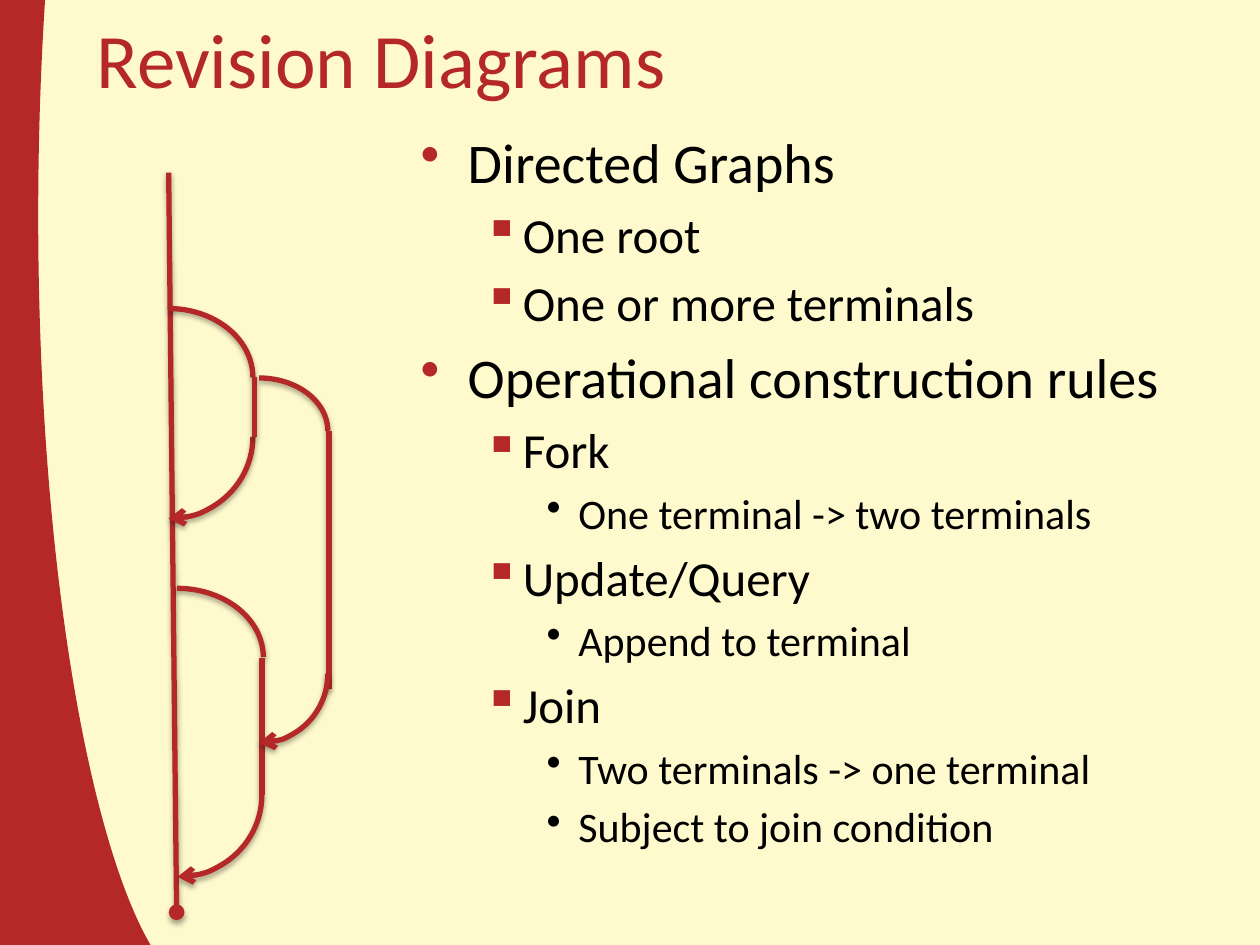
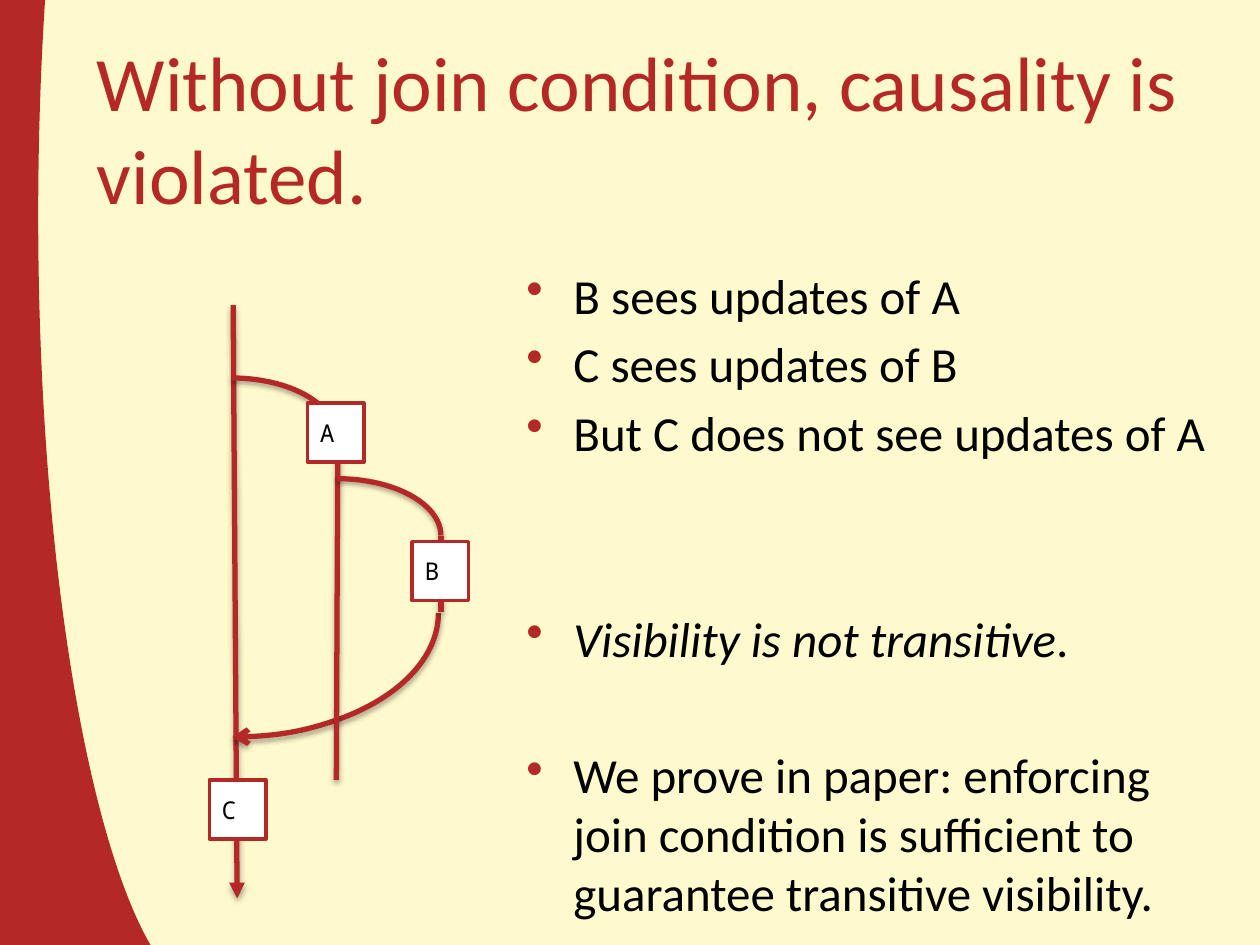
"""Builds two slides that explain revision diagrams and their join condition."""
from lxml import etree
from pptx import Presentation
from pptx.dml.color import RGBColor
from pptx.enum.shapes import MSO_CONNECTOR, MSO_SHAPE
from pptx.enum.text import MSO_ANCHOR, PP_ALIGN
from pptx.oxml.ns import qn
from pptx.util import Cm, Pt

ARC, RECTANGLE = MSO_SHAPE.ARC, MSO_SHAPE.RECTANGLE
STRAIGHT = MSO_CONNECTOR.STRAIGHT
MIDDLE, TOP = MSO_ANCHOR.MIDDLE, MSO_ANCHOR.TOP
LEFT = PP_ALIGN.LEFT

COLORS = {"background": "FFFACD", "accent": "B42828", "text": "000000", "label": "FFFFFF"}
BODY_FONT, LABEL_FONT = "Calibri", "Noto Sans Mono"
BRANCH_WIDTH = 3
LABEL_SIZE = (1.14, 1.19)
BULLETS = [
    {"char": "•", "color": "accent", "indent": 0.95, "hang": 0.95},
    {"char": "▪", "color": "accent", "indent": 2.06, "hang": 0.79},
    {"char": "•", "color": "text", "indent": 3.18, "hang": 0.64},
]
LEVEL_SIZES = [32, 28, 24]

GRAPH_RULES = [
    (0, "Directed Graphs"),
    (1, "One root"),
    (1, "One or more terminals"),
    (0, "Operational construction rules"),
    (1, "Fork"),
    (2, "One terminal -> two terminals"),
    (1, "Update/Query"),
    (2, "Append to terminal"),
    (1, "Join"),
    (2, "Two terminals -> one terminal"),
    (2, "Subject to join condition"),
]
VISIBILITY_POINTS = [
    (5.6, [("B sees updates of A", False)]),
    (5.6, [("C sees updates of B", False)]),
    (5.6, [("But C does not see updates of A", False)]),
    (84, [("Visibility is not transitive", True), (".", False)]),
    (44.5, [("We prove in paper: enforcing join condition is sufficient "
             "to guarantee transitive visibility.", False)]),
]


def rgb(name):
    """Return the named colour."""
    return RGBColor.from_string(COLORS[name])


def add_child(parent, tag, **attributes):
    """Append a drawing element with its attributes."""
    child = etree.SubElement(parent, qn(tag))
    for key, value in attributes.items():
        child.set(key, str(value))
    return child


def write(paragraph, text, *, size, color="text", font=BODY_FONT, italic=False):
    """Add a formatted run of text to a paragraph."""
    run = paragraph.add_run()
    run.text = text
    run.font.size = Pt(size)
    run.font.name = font
    run.font.italic = italic
    run.font.color.rgb = rgb(color)


def add_text_frame(slide, box, anchor=TOP):
    """Add a wrapping text box and return its frame."""
    frame = slide.shapes.add_textbox(*map(Cm, box)).text_frame
    frame.word_wrap = True
    frame.vertical_anchor = anchor
    return frame


def add_bullet(frame, index, level, space_before):
    """Return a bulleted paragraph of the given level."""
    paragraph = frame.add_paragraph() if index else frame.paragraphs[0]
    paragraph.level = level
    paragraph.space_before = Pt(space_before if index else 0)
    style = BULLETS[level]
    properties = paragraph._p.get_or_add_pPr()
    properties.set("marL", str(Cm(style["indent"])))
    properties.set("indent", str(-Cm(style["hang"])))
    add_child(add_child(properties, "a:buClr"), "a:srgbClr", val=COLORS[style["color"]])
    add_child(properties, "a:buChar", char=style["char"])
    return paragraph


def style_branch(branch, head=None, tail=None):
    """Give a branch its stroke, line ends and soft shadow."""
    branch.line.color.rgb = rgb("accent")
    branch.line.width = Pt(BRANCH_WIDTH)
    stroke = branch.line._get_or_add_ln()
    if head:
        add_child(stroke, "a:headEnd", type=head)
    if tail:
        add_child(stroke, "a:tailEnd", type=tail)
    effects = add_child(branch._element.spPr, "a:effectLst")
    shadow = add_child(effects, "a:outerShdw", blurRad=Pt(3.1), dist=Pt(1.8),
                       dir=90 * 60000, rotWithShape=0)
    add_child(add_child(shadow, "a:srgbClr", val=COLORS["text"]), "a:alpha", val=35000)


def add_revision(slide, start, end, tail=None):
    """Draw a straight revision line."""
    ends = map(Cm, (*start, *end))
    style_branch(slide.shapes.add_connector(STRAIGHT, *ends), tail=tail)


def add_arc(slide, box, flip=None):
    """Add an unfilled arc, mirrored along the given axis."""
    arc = slide.shapes.add_shape(ARC, *map(Cm, box))
    arc.fill.background()
    if flip:
        arc._element.spPr.xfrm.set(flip, "1")
    return arc


def add_fork(slide, *box):
    """Draw the curve that leaves a revision."""
    style_branch(add_arc(slide, box))


def add_join(slide, *box):
    """Draw the curve that returns to a revision with an arrow."""
    style_branch(add_arc(slide, box, "flipV"), head="arrow")


def add_label(slide, name, left, top):
    """Draw a boxed revision name."""
    label = slide.shapes.add_shape(RECTANGLE, *map(Cm, (left, top, *LABEL_SIZE)))
    label.shadow.inherit = False
    label.fill.solid()
    label.fill.fore_color.rgb = rgb("label")
    label.line.color.rgb = rgb("accent")
    label.line.width = Pt(2)
    label.text_frame.vertical_anchor = MIDDLE
    paragraph = label.text_frame.paragraphs[0]
    paragraph.alignment = LEFT
    write(paragraph, name, size=14, font=LABEL_FONT)


def add_slide(deck, title, title_height):
    """Add a slide with the shared background, side band and title."""
    slide = deck.slides.add_slide(deck.slide_layouts[6])
    slide.background.fill.solid()
    slide.background.fill.fore_color.rgb = rgb("background")
    band = add_arc(slide, (-0.64, -12.27, 7.82, 33.22), "flipH")
    band.adjustments[0] = 177.67
    band.adjustments[1] = 55.34
    band.shadow.inherit = False
    band.line.color.rgb = rgb("accent")
    band.line.width = Pt(80)
    frame = add_text_frame(slide, (1.7, -0.43, 22.86, title_height), MIDDLE)
    write(frame.paragraphs[0], title, size=44, color="accent")
    return slide


def build_diagram_slide(deck):
    """Build the slide on the rules of revision diagrams."""
    slide = add_slide(deck, "Revision Diagrams", 3.18)
    frame = add_text_frame(slide, (8.23, 2.44, 16.43, 16.03))
    for index, (level, rule) in enumerate(GRAPH_RULES):
        size = LEVEL_SIZES[level]
        write(add_bullet(frame, index, level, size * 0.2), rule, size=size)

    add_revision(slide, (3.4, 3.48), (3.56, 18.39), tail="oval")
    add_fork(slide, 1.7, 6.22, 3.4, 2.77)
    add_join(slide, 1.7, 7.16, 3.4, 3.3)
    add_revision(slide, (5.13, 7.59), (5.13, 8.81))
    add_fork(slide, 3.84, 7.62, 2.77, 2.13)
    add_revision(slide, (6.63, 8.69), (6.63, 13.89))
    add_fork(slide, 1.83, 11.86, 3.48, 2.77)
    add_revision(slide, (5.28, 13.26), (5.28, 16.03))
    add_join(slide, 3.84, 12.19, 2.77, 2.79)
    add_join(slide, 1.88, 14.38, 3.4, 3.3)


def build_causality_slide(deck):
    """Build the slide on causality without the join condition."""
    slide = add_slide(deck, "Without join condition, causality is violated.", 5.99)
    add_revision(slide, (4.7, 6.15), (4.78, 18.11), tail="triangle")
    add_fork(slide, 2.57, 7.62, 4.19, 2.29)
    add_join(slide, 0.53, 9.86, 8.31, 5)
    add_revision(slide, (6.81, 8.74), (6.78, 15.72))
    add_fork(slide, 4.7, 9.65, 4.19, 2.29)
    add_revision(slide, (8.89, 10.8), (8.89, 12.34))
    for name, left, top in [("A", 6.2, 8.13), ("B", 8.31, 10.92), ("C", 4.22, 15.72)]:
        add_label(slide, name, left, top)

    frame = add_text_frame(slide, (10.36, 5.22, 14.6, 13.6))
    for index, (space_before, runs) in enumerate(VISIBILITY_POINTS):
        paragraph = add_bullet(frame, index, 0, space_before)
        for text, italic in runs:
            write(paragraph, text, size=28, italic=italic)


def main():
    """Build and save the presentation."""
    deck = Presentation()
    deck.slide_width, deck.slide_height = Cm(25.4), Cm(19.05)
    build_diagram_slide(deck)
    build_causality_slide(deck)
    deck.save("out.pptx")


if __name__ == "__main__":
    main()
